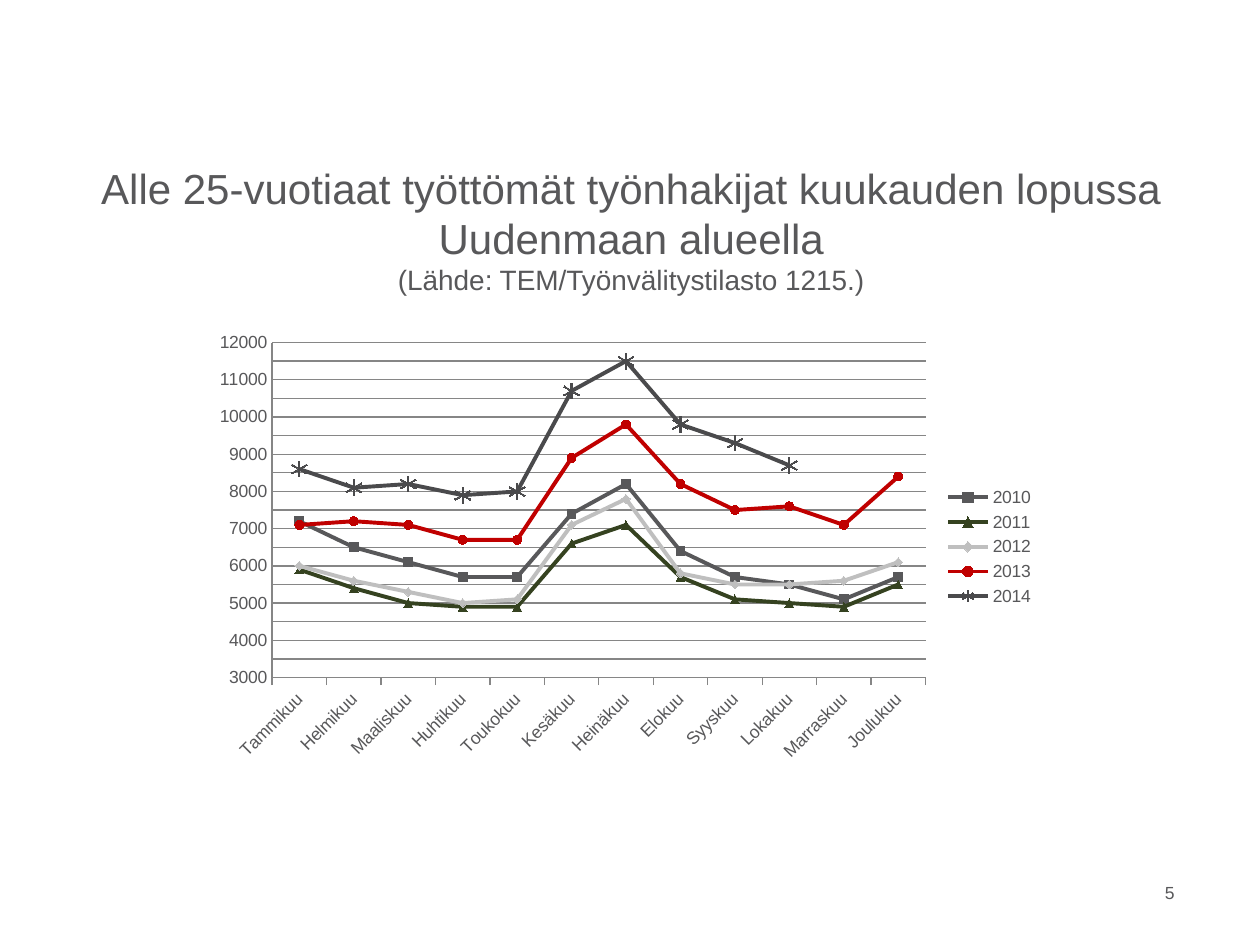
import pptx
import pptx.chart.data
import pptx.dml.color
import pptx.enum.chart
import pptx.enum.text
import pptx.util
from pptx.util import Inches

COLORS = {
    "text": "58585A", "grid": "868686", "2010": "58585A", "2011": "354220",
    "2012": "BFBFBF", "2013": "C00000", "2014": "4A4A4C",
}
FONT = "Arial"
MONTHS = ["Tammikuu", "Helmikuu", "Maaliskuu", "Huhtikuu", "Toukokuu", "Kesäkuu",
          "Heinäkuu", "Elokuu", "Syyskuu", "Lokakuu", "Marraskuu", "Joulukuu"]
JOBSEEKERS = {
    "2010": [7200, 6500, 6100, 5700, 5700, 7400, 8200, 6400, 5700, 5500, 5100, 5700],
    "2011": [5900, 5400, 5000, 4900, 4900, 6600, 7100, 5700, 5100, 5000, 4900, 5500],
    "2012": [6000, 5600, 5300, 5000, 5100, 7100, 7800, 5800, 5500, 5500, 5600, 6100],
    "2013": [7100, 7200, 7100, 6700, 6700, 8900, 9800, 8200, 7500, 7600, 7100, 8400],
    "2014": [8600, 8100, 8200, 7900, 8000, 10700, 11500, 9800, 9300, 8700, None, None],
}
MARKERS = {"2010": ("SQUARE", 5), "2011": ("TRIANGLE", 5), "2012": ("DIAMOND", 5),
           "2013": ("CIRCLE", 5), "2014": ("STAR", 9)}


def rgb(name):
    """Return the named colour."""
    return pptx.dml.color.RGBColor.from_string(COLORS[name])


def add_text(paragraph, text, size, color="text"):
    """Append a formatted run to a paragraph."""
    run = paragraph.add_run()
    run.text = text
    run.font.size = pptx.util.Pt(size)
    run.font.name = FONT
    run.font.color.rgb = rgb(color)


def add_box(slide, left, top, width, height, align, anchor):
    """Add a wrapping text box and return its first paragraph."""
    frame = slide.shapes.add_textbox(left, top, width, height).text_frame
    frame.word_wrap = True
    frame.vertical_anchor = anchor
    paragraph = frame.paragraphs[0]
    paragraph.alignment = align
    return paragraph


def build_title(slide, left, top, width, height):
    """Place the heading with its source line."""
    heading = add_box(slide, left, top, width, height,
                      pptx.enum.text.PP_ALIGN.CENTER, pptx.enum.text.MSO_ANCHOR.MIDDLE)
    add_text(heading, "Alle 25-vuotiaat työttömät työnhakijat kuukauden lopussa Uudenmaan alueella", 24)
    heading.add_line_break()
    add_text(heading, "(Lähde: TEM/Työnvälitystilasto 1215.)", 16)


def build_page_number(slide, left, top, width, height):
    """Place the page number."""
    number = add_box(slide, left, top, width, height,
                     pptx.enum.text.PP_ALIGN.RIGHT, pptx.enum.text.MSO_ANCHOR.TOP)
    add_text(number, "5", 10)


def style_line(line, color, width):
    """Give a line its colour and width in points."""
    line.color.rgb = rgb(color)
    line.width = pptx.util.Pt(width)


def style_axes(chart):
    """Set scale, gridlines, ticks and label slant."""
    tick_mark = pptx.enum.chart.XL_TICK_MARK
    values, months = chart.value_axis, chart.category_axis
    values.minimum_scale, values.maximum_scale, values.major_unit = 3000, 12000, 500
    values.major_tick_mark = tick_mark.NONE
    values.tick_labels.number_format = "0"
    values.tick_labels.number_format_is_linked = False
    values.has_major_gridlines = True
    style_line(values.major_gridlines.format.line, "grid", 0.75)
    months.major_tick_mark = tick_mark.OUTSIDE
    for axis in (values, months):
        style_line(axis.format.line, "grid", 0.75)
        axis.tick_labels.font.size = pptx.util.Pt(10)
    months._element.txPr.bodyPr.set("rot", "-2700000")


def style_series(series):
    """Colour one year's line and marker."""
    year = series.name
    symbol, size = MARKERS[year]
    series.smooth = False
    style_line(series.format.line, year, 2.25)
    marker = series.marker
    marker.style = pptx.enum.chart.XL_MARKER_STYLE[symbol]
    marker.size = size
    style_line(marker.format.line, year, 0.75)
    if symbol == "STAR":
        marker.format.fill.background()
    else:
        marker.format.fill.solid()
        marker.format.fill.fore_color.rgb = rgb(year)


def build_chart(slide, left, top, width, height):
    """Place the monthly line chart."""
    monthly = pptx.chart.data.CategoryChartData(number_format="0")
    monthly.categories = MONTHS
    for year, counts in JOBSEEKERS.items():
        monthly.add_series(year, counts)
    chart = slide.shapes.add_chart(pptx.enum.chart.XL_CHART_TYPE.LINE_MARKERS,
                                   left, top, width, height, monthly).chart
    chart.has_title = False
    chart.font.size = pptx.util.Pt(10)
    chart.font.name = FONT
    chart.font.color.rgb = rgb("text")
    chart.has_legend = True
    chart.legend.position = pptx.enum.chart.XL_LEGEND_POSITION.RIGHT
    chart.legend.include_in_layout = False
    style_axes(chart)
    chart.plots[0].vary_by_categories = False
    for series in chart.plots[0].series:
        style_series(series)


def main():
    """Build and save the slide."""
    deck = pptx.Presentation()
    deck.slide_width, deck.slide_height = Inches(10), Inches(7.5)
    slide = deck.slides.add_slide(deck.slide_layouts[6])
    build_title(slide, Inches(0.51), Inches(1.47), Inches(9), Inches(0.7))
    build_chart(slide, Inches(1.61), Inches(2.57), Inches(6.7), Inches(3.54))
    build_page_number(slide, Inches(8.98), Inches(6.95), Inches(0.44), Inches(0.4))
    deck.save("out.pptx")


if __name__ == "__main__":
    main()
